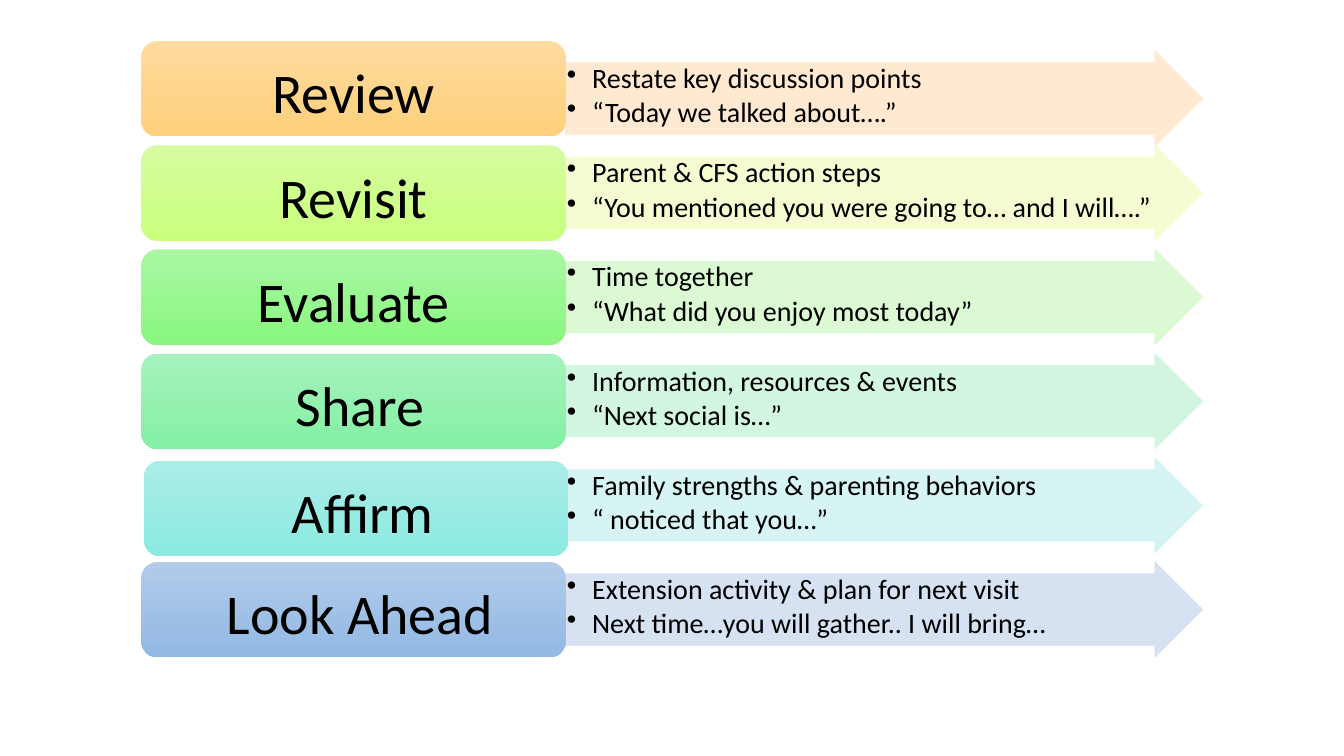
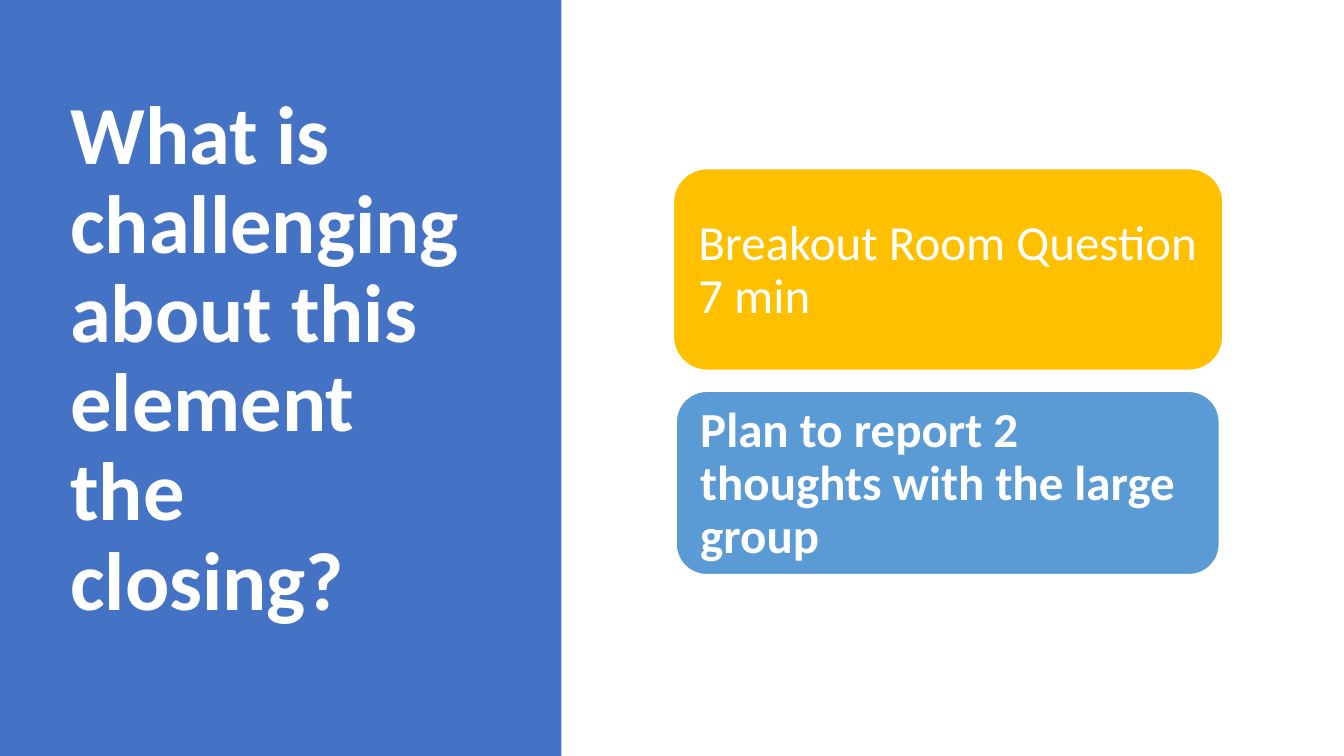
import pptx
import pptx.util
import pptx.dml.color
import pptx.enum.shapes
import pptx.enum.text
import pptx.oxml.ns
import lxml.etree

Pt = pptx.util.Pt
KIND = pptx.enum.shapes.MSO_SHAPE
ALIGN = pptx.enum.text.PP_ALIGN
ANCHOR = pptx.enum.text.MSO_ANCHOR
qn = pptx.oxml.ns.qn

FONT = "Calibri"
HUES = {
    "black": "000000", "white": "FFFFFF", "band": "4472C4",
    "gold": "FFC000", "blue": "5B9BD5",
}
STEPS = [
    ("Review", "Restate key discussion points\n“Today we talked about….”",
     "FFDB9E", "FFD07C", "FFE8CC"),
    ("Revisit", "Parent & CFS action steps\n“You mentioned you were going to… and I will….”",
     "D5FC9F", "CAFF7D", "F5FCCD"),
    ("Evaluate", "Time together\n“What did you enjoy most today”",
     "A9F7A2", "89F780", "D8F9CE"),
    (" Share", "Information, resources & events\n“Next social is…”",
     "A6F2BC", "84F0A4", "CFF6DE"),
    (" Affirm", "Family strengths & parenting behaviors\n“ noticed that you…”",
     "ABEDE7", "8BEAE2", "D1F3F2"),
    (" Look Ahead", "Extension activity & plan for next visit\nNext time…you will gather.. I will bring…",
     "B1CBE9", "93B9E4", "D2DFF0"),
]
TOP, PITCH, TALL = 29.4, 74.4, 68
LEFT, WIDE, REACH = 101, 303, 455
DROP = {"Review": 7}
NUDGE = {" Affirm": 2}


def rgb(hue):
    """Turn a hex string into a colour."""
    return pptx.dml.color.RGBColor.from_string(hue)


def write(shape, text, size=20, hue="black", bold=False, align=ALIGN.LEFT,
          anchor=ANCHOR.MIDDLE, pad=(7.2, 3.6, 7.2, 3.6), lead=0.9, after=0,
          dots=False):
    """Fill a shape with formatted text, one paragraph a line."""
    frame = shape.text_frame
    frame.text = text
    frame.word_wrap = True
    frame.auto_size = pptx.enum.text.MSO_AUTO_SIZE.NONE
    frame.vertical_anchor = anchor
    (frame.margin_left, frame.margin_top,
     frame.margin_right, frame.margin_bottom) = map(Pt, pad)
    for para in frame.paragraphs:
        para.alignment = align
        para.line_spacing = lead
        para.space_before = Pt(0)
        para.space_after = Pt(after)
        for run in para.runs:
            run.font.name = FONT
            run.font.size = Pt(size)
            run.font.bold = bold
            run.font.color.rgb = rgb(HUES[hue])
        if dots:
            props = para._p.get_or_add_pPr()
            props.set("marL", str(Pt(18)))
            props.set("indent", str(-Pt(18)))
            lxml.etree.SubElement(props, qn("a:buChar"), char="•")


def draw(slide, kind, box, fill, line=None, width=1):
    """Add a flat shape with a solid fill and an optional outline."""
    shape = slide.shapes.add_shape(kind, *map(Pt, box))
    shape.shadow.inherit = False
    shape.fill.solid()
    shape.fill.fore_color.rgb = rgb(fill)
    if line:
        shape.line.color.rgb = rgb(line)
        shape.line.width = Pt(width)
    else:
        shape.line.fill.background()
    return shape


def fade(shape, share):
    """Set the opacity of the fill and line in percent."""
    for hue in shape._element.spPr.iter(qn("a:srgbClr")):
        lxml.etree.SubElement(hue, qn("a:alpha"), val=str(share * 1000))


def blend(shape, start, end):
    """Give a shape a gradient that runs from top to bottom."""
    shape.fill.gradient()
    shape.fill.gradient_angle = 270
    for stop, hue in zip(shape.fill.gradient_stops, (start, end)):
        stop.color.rgb = rgb(hue)


def step(slide, top, name, notes, start, end, pale):
    """Draw one step: an arrow with its points and a named box."""
    box = (LEFT + WIDE, top + DROP.get(name, 0), REACH, TALL)
    arrow = draw(slide, KIND.RIGHT_ARROW, box, pale, pale, 0.5)
    arrow.adjustments[0] = 0.75
    arrow.adjustments[1] = 0.5
    fade(arrow, 90)
    write(arrow, notes, anchor=ANCHOR.TOP, pad=(1, 1, 1, 1), after=3, dots=True)
    shift = NUDGE.get(name, 0)
    label = draw(slide, KIND.ROUNDED_RECTANGLE,
                 (LEFT + shift, top + shift, WIDE, TALL), start)
    blend(label, start, end)
    write(label, name, size=40, align=ALIGN.CENTER, lead=1, pad=(12, 8, 12, 4))


def card(slide, box, text, fill, bold=False):
    """Draw a rounded card with white text."""
    shape = draw(slide, KIND.ROUNDED_RECTANGLE, box, HUES[fill], HUES["white"])
    write(shape, text, size=35, hue="white", bold=bold, pad=(10.8, 10.8, 8, 8))


def head(slide, text):
    """Draw the side band and set the title on top of it."""
    band = draw(slide, KIND.RECTANGLE, (0, 0, 401, 540), HUES["band"])
    title = slide.shapes.title
    title.left, title.top, title.width, title.height = map(Pt, (43, 41, 301, 433))
    write(title, text, size=59, hue="white", bold=True)
    band.element.addnext(title.element)


def main():
    """Build both slides and save them."""
    deck = pptx.Presentation()
    deck.slide_width, deck.slide_height = Pt(960), Pt(540)

    slide = deck.slides.add_slide(deck.slide_layouts[6])
    for row, parts in enumerate(STEPS):
        step(slide, TOP + row * PITCH, *parts)

    slide = deck.slides.add_slide(deck.slide_layouts[5])
    head(slide, "What is challenging about this element the closing?")
    card(slide, (481, 120.5, 392.5, 144), "Breakout Room Question 7 min", "gold")
    card(slide, (483, 279.5, 388, 131),
         "Plan to report 2 thoughts with the large group", "blue", bold=True)

    deck.save("out.pptx")


if __name__ == "__main__":
    main()
